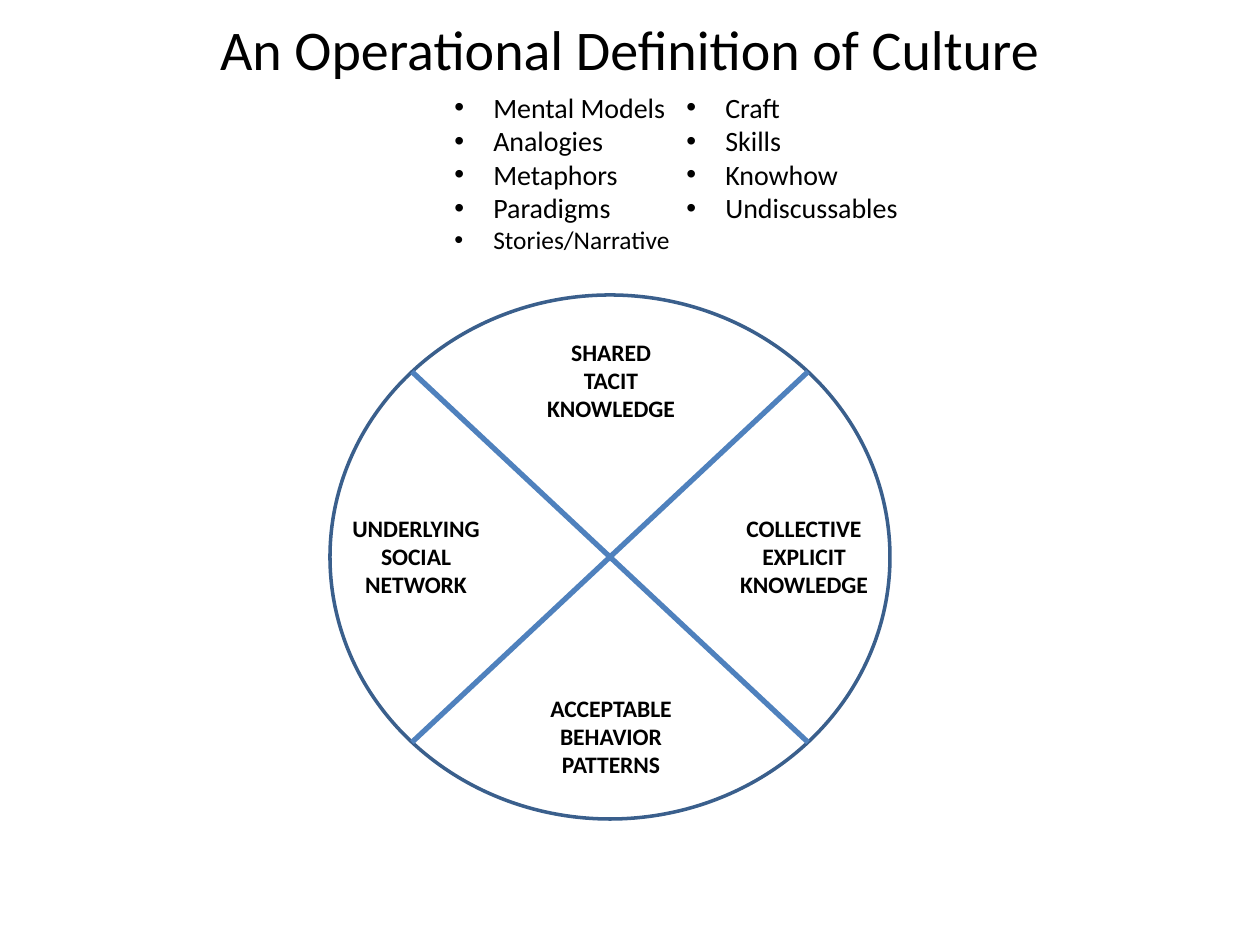
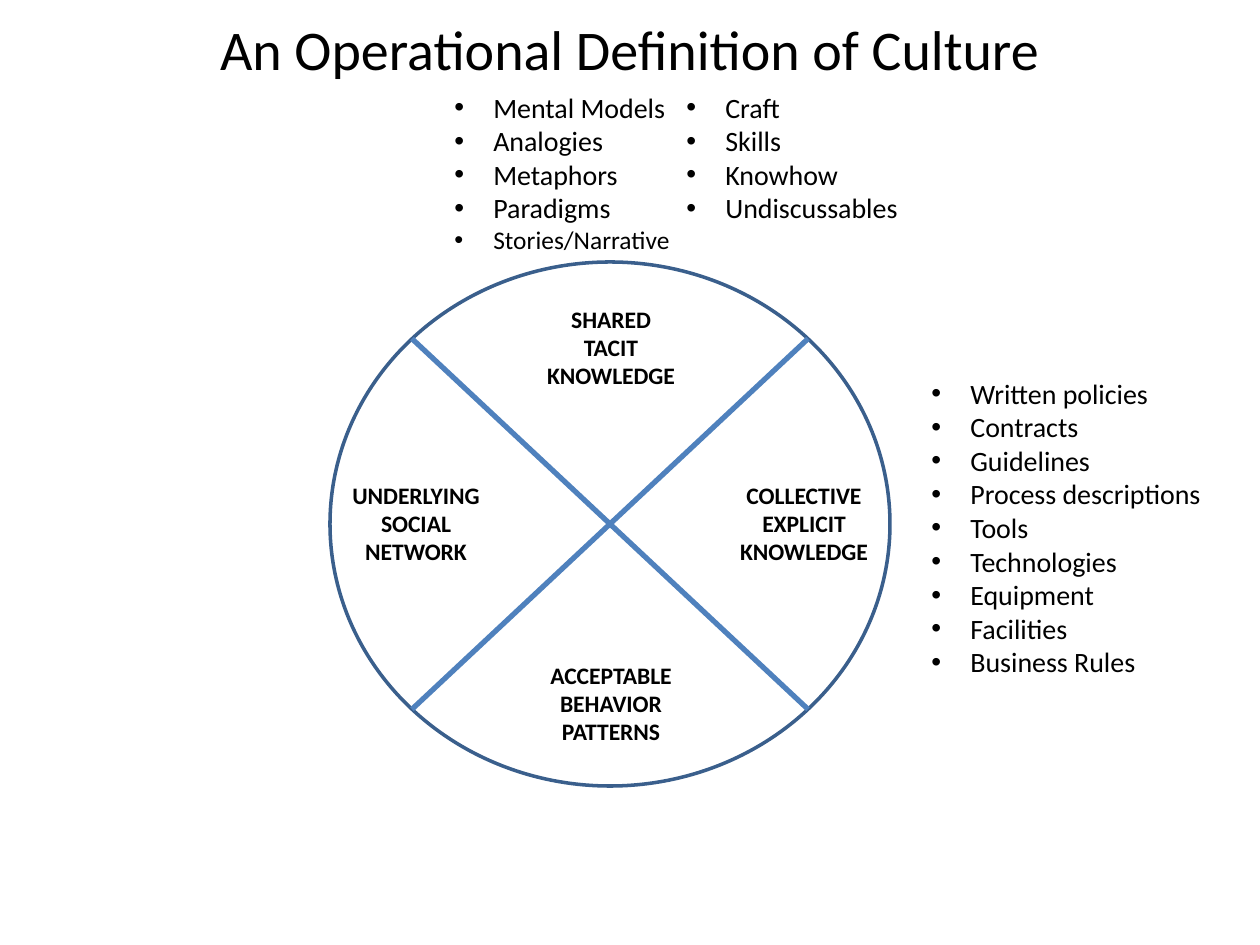
import math

from lxml import etree
from pptx import Presentation
from pptx import util as u
from pptx.dml.color import RGBColor
from pptx.enum import shapes, text
from pptx.oxml import ns

TITLE = "An Operational Definition of Culture"
TACIT_LISTS = [
    {"left": 442, "top": 84, "width": 251,
     "items": ["Mental Models", "Analogies", "Metaphors", "Paradigms", "Stories/Narrative"],
     "small": {"Stories/Narrative"}},
    {"left": 674, "top": 84, "width": 261,
     "items": ["Craft", "Skills", "Knowhow", "Undiscussables"]},
]
EXPLICIT_LIST = {
    "left": 919, "top": 370, "width": 324,
    "items": ["Written policies", "Contracts", "Guidelines", "Process descriptions", "Tools",
              "Technologies", "Equipment", "Facilities", "Business Rules"],
}
SLIDES = [
    {"wheel_top": 295, "lists": TACIT_LISTS},
    {"wheel_top": 262, "lists": [EXPLICIT_LIST, *TACIT_LISTS]},
]
# Words of each quarter and its offset from the wheel's centre
QUARTERS = [
    (["SHARED", "TACIT", "KNOWLEDGE"], (1, -175)),
    (["UNDERLYING", "SOCIAL", "NETWORK"], (-194, 1)),
    (["COLLECTIVE", "EXPLICIT", "KNOWLEDGE"], (194, 1)),
    (["ACCEPTABLE", "BEHAVIOR", "PATTERNS"], (1, 181)),
]

THEME = {
    "title": {"name": "Calibri", "size": u.Pt(32)},
    "label": {"name": "Calibri", "size": u.Pt(13.5), "bold": True},
    "item": {"name": "Calibri", "size": u.Pt(16)},
    "small_item": {"name": "Calibri", "size": u.Pt(14.5)},
    "ink": RGBColor(0, 0, 0),
    "rim": (RGBColor.from_string("3A5F8C"), 2),
    "spoke": (RGBColor.from_string("4F81BD"), 3),
}
PX_PER_INCH = 126
PAGE_SIZE = (1260, 945)
TITLE_BOX = (63, 8, 1134, 157)
WHEEL_LEFT, WHEEL_WIDTH, WHEEL_HEIGHT = 330, 560, 524
LABEL_WIDTH, LABEL_HEIGHT = 157, 101
ROW_HEIGHT, LIST_PADDING, BULLET_INDENT = 34, 13, 39


def px(*lengths):
    return [u.Emu(round(length * u.Inches(1) / PX_PER_INCH)) for length in lengths]


def set_line(shape, style):
    color, width = style
    shape.line.color.rgb = color
    shape.line.width = u.Pt(width)


def add_text(parent, bounds, lines, align=text.PP_ALIGN.LEFT, **frame_format):
    """Add a text box with one paragraph for each (words, theme style) pair."""
    box = parent.add_textbox(*px(*bounds))
    frame = box.text_frame
    for name, value in {"word_wrap": True, **frame_format}.items():
        setattr(frame, name, value)
    for index, (words, style) in enumerate(lines):
        para = frame.add_paragraph() if index else frame.paragraphs[0]
        para.alignment = align
        span = para.add_run()
        span.text = words
        span.font.color.rgb = THEME["ink"]
        for name, value in THEME[style].items():
            setattr(span.font, name, value)
    return box


def add_bullet(para):
    indent, = px(BULLET_INDENT)
    props = para._p.get_or_add_pPr()
    props.set("marL", str(indent))
    props.set("indent", str(-indent))
    etree.SubElement(props, ns.qn("a:buFont"), typeface="Arial")
    etree.SubElement(props, ns.qn("a:buChar"), char="•")


def add_list(page, left, top, width, items, small=()):
    height = len(items) * ROW_HEIGHT + LIST_PADDING
    lines = [(item, "small_item" if item in small else "item") for item in items]
    box = add_text(page.shapes, (left, top, width, height), lines,
                   auto_size=text.MSO_AUTO_SIZE.SHAPE_TO_FIT_TEXT)
    for para in box.text_frame.paragraphs:
        add_bullet(para)


def add_wheel(page, top):
    parts = page.shapes.add_group_shape().shapes
    rim = parts.add_shape(shapes.MSO_SHAPE.OVAL, *px(WHEEL_LEFT, top, WHEEL_WIDTH, WHEEL_HEIGHT))
    rim.shadow.inherit = False
    rim.fill.background()
    set_line(rim, THEME["rim"])

    center_x, center_y = WHEEL_LEFT + WHEEL_WIDTH / 2, top + WHEEL_HEIGHT / 2
    reach_x, reach_y = (side / 2 * math.sqrt(0.5) for side in (WHEEL_WIDTH, WHEEL_HEIGHT))
    for side in (1, -1):
        spoke = parts.add_connector(shapes.MSO_CONNECTOR.STRAIGHT, *px(
            center_x + side * reach_x, center_y - reach_y,
            center_x - side * reach_x, center_y + reach_y))
        set_line(spoke, THEME["spoke"])
        etree.SubElement(spoke._element.spPr, ns.qn("a:effectLst"))

    for words, (shift_x, shift_y) in QUARTERS:
        bounds = (center_x + shift_x - LABEL_WIDTH / 2, center_y + shift_y - LABEL_HEIGHT / 2,
                  LABEL_WIDTH, LABEL_HEIGHT)
        add_text(parts, bounds, [(word, "label") for word in words], text.PP_ALIGN.CENTER,
                 word_wrap=False, auto_size=text.MSO_AUTO_SIZE.SHAPE_TO_FIT_TEXT)


def main():
    deck = Presentation()
    deck.slide_width, deck.slide_height = px(*PAGE_SIZE)
    for content in SLIDES:
        page = deck.slides.add_slide(deck.slide_layouts[6])
        add_wheel(page, content["wheel_top"])
        for bullet_list in content["lists"]:
            add_list(page, **bullet_list)
        add_text(page.shapes, TITLE_BOX, [(TITLE, "title")], text.PP_ALIGN.CENTER)
    deck.save("out.pptx")


if __name__ == "__main__":
    main()
